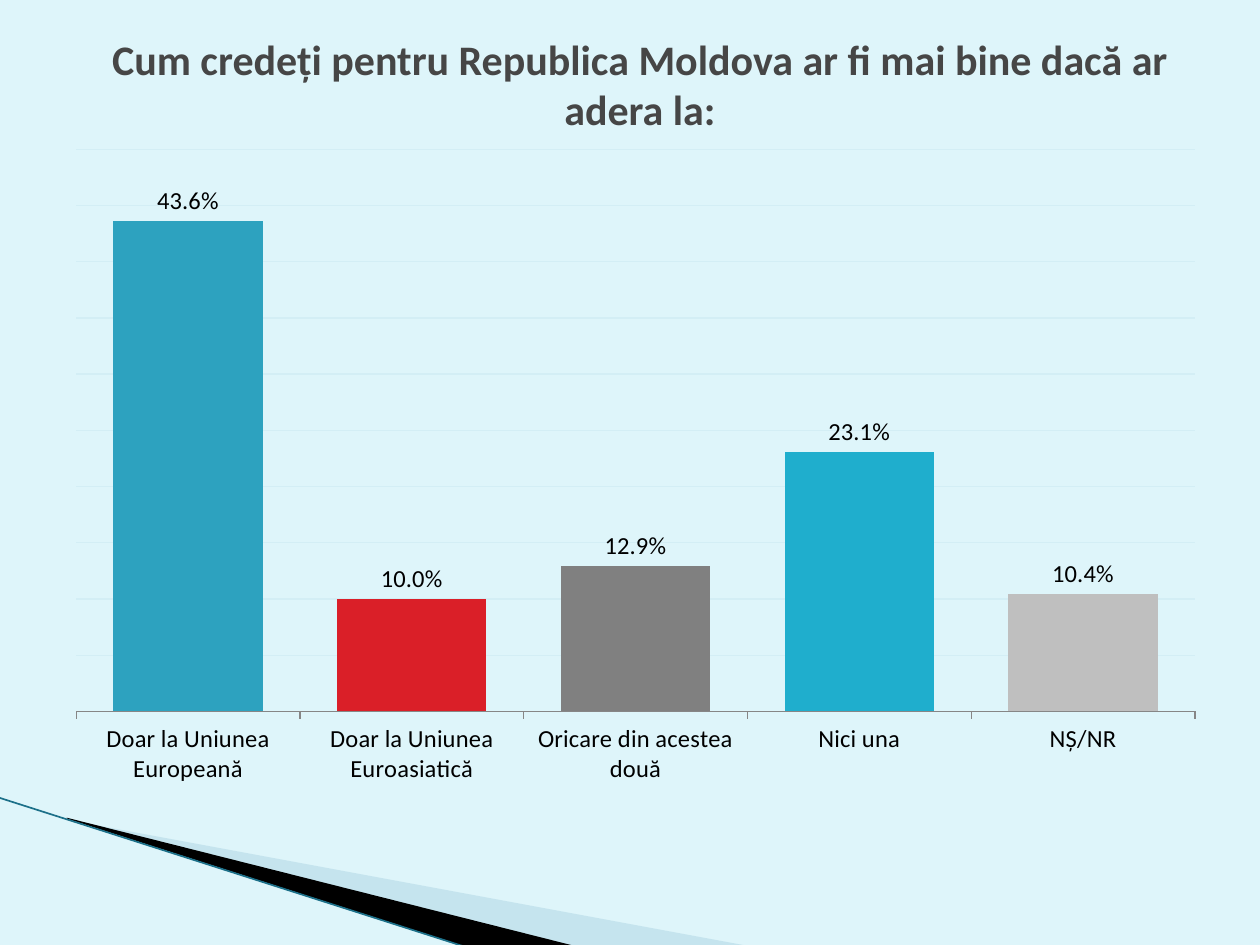
"""Build a survey slide with a title, a column chart and a wedge decoration."""
from lxml import etree
from pptx import Presentation
from pptx.chart.data import CategoryChartData
from pptx.dml.color import RGBColor
from pptx.enum.chart import XL_CHART_TYPE, XL_LABEL_POSITION, XL_TICK_LABEL_POSITION, XL_TICK_MARK
from pptx.enum.shapes import MSO_CONNECTOR
from pptx.enum.text import MSO_ANCHOR, PP_ALIGN
from pptx.oxml.ns import qn
from pptx.util import Inches, Pt

COLUMNS = XL_CHART_TYPE.COLUMN_CLUSTERED
OUTSIDE_END = XL_LABEL_POSITION.OUTSIDE_END
NO_LABELS = XL_TICK_LABEL_POSITION.NONE
TICK_NONE, TICK_OUT = XL_TICK_MARK.NONE, XL_TICK_MARK.OUTSIDE
STRAIGHT = MSO_CONNECTOR.STRAIGHT
MIDDLE, CENTER = MSO_ANCHOR.MIDDLE, PP_ALIGN.CENTER

TITLE = "Cum credeți pentru Republica Moldova ar fi mai bine dacă ar adera la:"
ANSWERS = [
    ("Doar la Uniunea Europeană", 0.436, "european"),
    ("Doar la Uniunea Euroasiatică", 0.1, "eurasian"),
    ("Oricare din acestea două", 0.129, "either"),
    ("Nici una", 0.231, "neither"),
    ("NȘ/NR", 0.104, "unknown"),
]
COLORS = {
    "background": "DEF5FA", "title": "464646", "text": "000000",
    "european": "2DA2BF", "eurasian": "DA1F28", "either": "808080",
    "neither": "1FAECD", "unknown": "BFBFBF", "grid": "D3EEF5",
    "axis": "868686", "pale wedge": "A0CBDC", "dark wedge": "000000", "edge": "1C7089",
}
TITLE_BOX = (5.8, 3.33, 90, 11.07)
CHART_BOX = (4.2, 14.4, 92.5, 70)
PLOT_SHARES = {"x": 0.02, "y": 0.02, "w": 0.96, "h": 0.85}
WEDGES = [
    ("pale wedge", 40, [(5.5, 86.8), (59.5, 100.13), (45.6, 100.13), (5.5, 86.67)]),
    ("dark wedge", 100, [(5.3, 86.53), (45.7, 100.13), (37.2, 100.27), (5.4, 86.67)]),
]
EDGE = (-0.1, 84.4, 37.1, 100.27)
TITLE_FONT = {"name": "Calibri", "size": Pt(24), "bold": True}
CHART_FONT = {"name": "Calibri", "size": Pt(14), "bold": False}
VALUE_AXIS = {"minimum_scale": 0, "maximum_scale": 0.5, "major_unit": 0.05,
              "has_major_gridlines": True, "major_tick_mark": TICK_NONE,
              "tick_label_position": NO_LABELS}
LABELS = {"show_value": True, "number_format": "0.0%",
          "number_format_is_linked": False, "position": OUTSIDE_END}
WIDTH, HEIGHT = Inches(10), Inches(7.5)


def apply(target, values):
    for name, value in values.items():
        setattr(target, name, value)


def color(name):
    return RGBColor.from_string(COLORS[name])


def paint(fill, name):
    fill.solid()
    fill.fore_color.rgb = color(name)


def place(*percents):
    return [round(percent * (HEIGHT if index % 2 else WIDTH) / 100)
            for index, percent in enumerate(percents)]


def add_wedge(slide, name, opacity, points):
    corners = [place(*point) for point in points]
    builder = slide.shapes.build_freeform(*corners[0], scale=1.0)
    builder.add_line_segments(corners[1:], close=True)
    wedge = builder.convert_to_shape()
    wedge.shadow.inherit = False
    wedge.line.fill.background()
    paint(wedge.fill, name)
    if opacity < 100:
        tint = next(wedge.element.iter(qn("a:srgbClr")))
        etree.SubElement(tint, qn("a:alpha"), val=str(opacity * 1000))


def add_edge(slide):
    edge = slide.shapes.add_connector(STRAIGHT, *place(*EDGE))
    edge.line.width = Pt(0.95)
    edge.line.color.rgb = color("edge")
    etree.SubElement(edge.element.spPr, qn("a:effectLst"))


def add_title(slide):
    frame = slide.shapes.add_textbox(*place(*TITLE_BOX)).text_frame
    apply(frame, {"word_wrap": True, "vertical_anchor": MIDDLE})
    paragraph = frame.paragraphs[0]
    apply(paragraph, {"text": TITLE, "alignment": CENTER})
    apply(paragraph.font, TITLE_FONT)
    paragraph.font.color.rgb = color("title")


def fix_plot(chart):
    area = chart.element.find(".//" + qn("c:plotArea"))
    layout = area.find(qn("c:layout"))
    if layout is None:
        layout = etree.Element(qn("c:layout"))
        area.insert(0, layout)
    manual = etree.SubElement(layout, qn("c:manualLayout"))
    settings = {"layoutTarget": "inner", "xMode": "edge", "yMode": "edge", **PLOT_SHARES}
    for name, value in settings.items():
        etree.SubElement(manual, qn("c:" + name), val=str(value))


def add_answers(slide):
    names, shares, keys = zip(*ANSWERS)
    data = CategoryChartData(number_format="0.0%")
    data.categories = names
    data.add_series("Series 1", shares)
    chart = slide.shapes.add_chart(COLUMNS, *place(*CHART_BOX), data).chart
    apply(chart, {"has_legend": False, "has_title": False})
    apply(chart.font, CHART_FONT)
    chart.font.color.rgb = color("text")
    plot = chart.plots[0]
    apply(plot, {"gap_width": 50, "vary_by_categories": False, "has_data_labels": True})
    apply(plot.data_labels, LABELS)
    for index, key in enumerate(keys):
        paint(plot.series[0].points[index].format.fill, key)
    apply(chart.value_axis, VALUE_AXIS)
    chart.value_axis.format.line.fill.background()
    chart.category_axis.major_tick_mark = TICK_OUT
    lines = [(chart.value_axis.major_gridlines, "grid"), (chart.category_axis, "axis")]
    for part, name in lines:
        part.format.line.width = Pt(0.75)
        part.format.line.color.rgb = color(name)
    fix_plot(chart)


def main():
    presentation = Presentation()
    apply(presentation, {"slide_width": WIDTH, "slide_height": HEIGHT})
    slide = presentation.slides.add_slide(presentation.slide_layouts[6])
    paint(slide.background.fill, "background")
    for wedge in WEDGES:
        add_wedge(slide, *wedge)
    add_edge(slide)
    add_title(slide)
    add_answers(slide)
    presentation.save("out.pptx")


if __name__ == "__main__":
    main()
